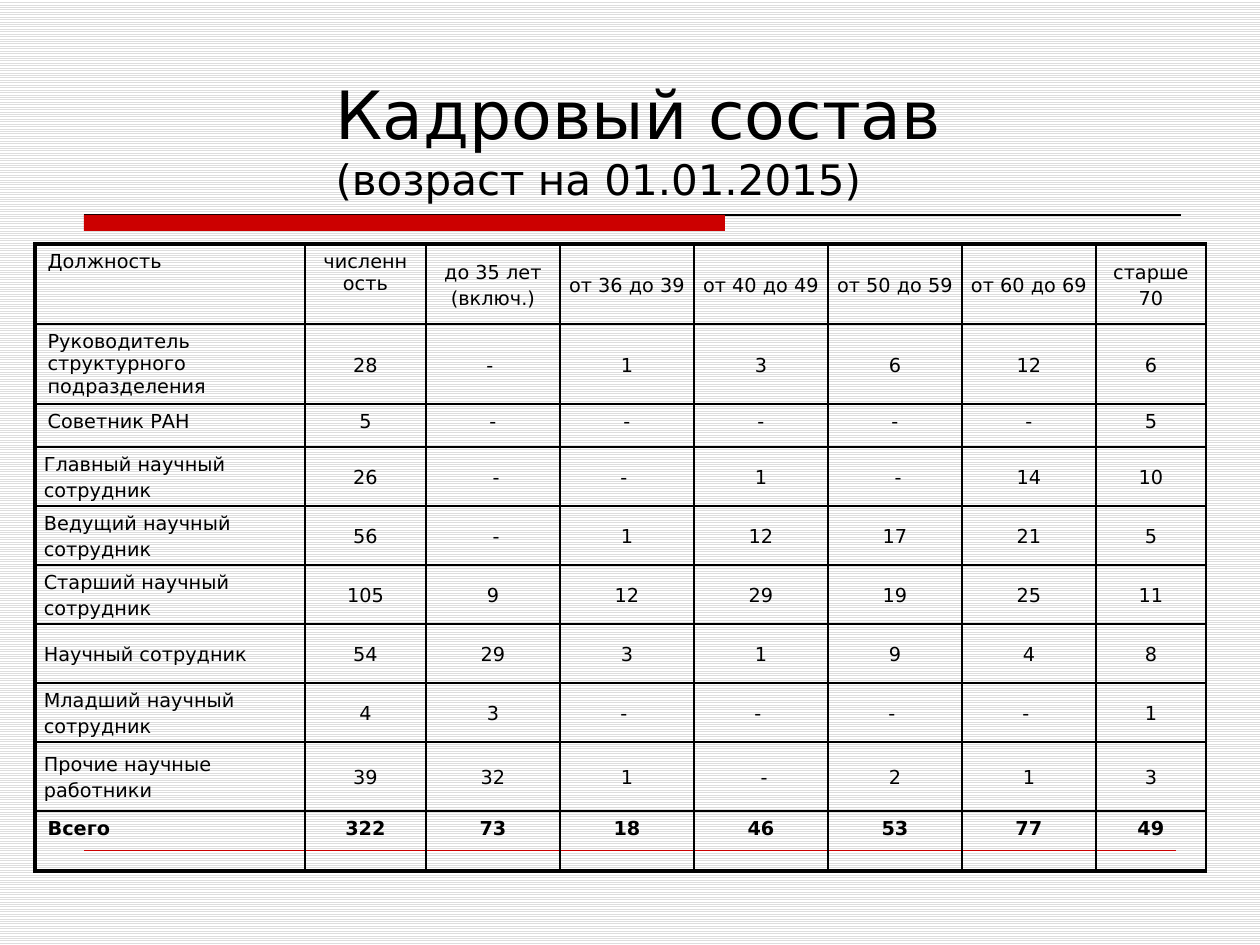
from lxml import etree
from pptx import Presentation
from pptx import util as u
from pptx.dml.color import RGBColor
from pptx.enum import dml, shapes, text
from pptx.oxml import ns

PX = 914400 // 126
LEFT, CENTER = text.PP_ALIGN.LEFT, text.PP_ALIGN.CENTER
TOP, MIDDLE = text.MSO_ANCHOR.TOP, text.MSO_ANCHOR.MIDDLE
BLACK, RED = "000000", "CC0000"

COLS = [270, 121] + [134] * 5 + [110]
ROWS = [80, 57, 43] + [59] * 5 + [69, 60]
DATA = [line.split("|") for line in (
    "Должность|численность|до 35 лет (включ.)|от 36 до 39|от 40 до 49|от 50 до 59|от 60 до 69|старше 70",
    "Руководитель структурного подразделения|28|- |1|3|6|12|6",
    "Советник РАН|5|-|-|-|-|-|5",
    "Главный научный сотрудник|26| -|- |1| -|14|10",
    "Ведущий научный сотрудник|56| -|1|12|17|21|5",
    "Старший научный сотрудник|105|9|12|29|19|25|11",
    "Научный сотрудник|54|29|3|1|9|4|8",
    "Младший научный сотрудник|4|3|- |- |- |- |1",
    "Прочие научные работники|39|32|1| -|2|1|3",
    "Всего|322|73|18|46|53|77|49",
)]
LAST = len(DATA) - 1
TOP_CELLS = {(0, 0), (0, 1), (1, 0)}
TOP_ROWS = {2, LAST}


def px(n):
    return u.Emu(n * PX)


def color(value):
    return RGBColor.from_string(value)


def write(p, content, size=11, bold=False, font="DejaVu Sans", fill=BLACK,
          align=LEFT, spacing=1.0, before=0, after=0):
    p.alignment, p.line_spacing = align, spacing
    p.space_before, p.space_after = u.Pt(before), u.Pt(after)
    r = p.add_run()
    r.text = content
    r.font.size, r.font.bold, r.font.name = u.Pt(size), bold, font
    r.font.color.rgb = color(fill)


def border(cell, side, width):
    ln = etree.SubElement(cell._tc.get_or_add_tcPr(), ns.qn("a:ln" + side),
                          w=str(u.Pt(width)))
    fill = etree.SubElement(ln, ns.qn("a:solidFill"))
    etree.SubElement(fill, ns.qn("a:srgbClr"), val=BLACK)


class Deck:
    def __init__(self, width, height):
        self.prs = Presentation()
        self.prs.slide_width, self.prs.slide_height = px(width), px(height)
        self.s = self.prs.slides.add_slide(self.prs.slide_layouts[5])

    def background(self, fore, back):
        fill = self.s.background.fill
        fill.patterned()
        fill.pattern = dml.MSO_PATTERN.LIGHT_HORIZONTAL
        fill.fore_color.rgb, fill.back_color.rgb = color(fore), color(back)

    def title(self, x, y, w, h, main, sub):
        sp = self.s.shapes.title
        sp.left, sp.top, sp.width, sp.height = map(px, (x, y, w, h))
        tf = sp.text_frame
        tf.word_wrap, tf.auto_size = True, text.MSO_AUTO_SIZE.NONE
        tf.vertical_anchor = text.MSO_ANCHOR.BOTTOM
        p = tf.paragraphs[0]
        write(p, main, size=38)
        p.add_line_break()
        write(p, sub, size=24)

    def bar(self, x, y, w, h, fill):
        sp = self.s.shapes.add_shape(shapes.MSO_SHAPE.RECTANGLE,
                                     px(x), px(y), px(w), px(h))
        sp.shadow.inherit = False
        sp.fill.solid()
        sp.fill.fore_color.rgb = color(fill)
        sp.line.fill.background()

    def rule(self, x1, x2, y, stroke, width):
        cn = self.s.shapes.add_connector(shapes.MSO_CONNECTOR.STRAIGHT,
                                         px(x1), px(y), px(x2), px(y))
        cn.line.color.rgb, cn.line.width = color(stroke), u.Pt(width)
        etree.SubElement(cn._element.spPr, ns.qn("a:effectLst"))

    def table(self, x, y):
        frame = self.s.shapes.add_table(len(ROWS), len(COLS), px(x), px(y),
                                        px(sum(COLS)), px(sum(ROWS)))
        tbl = frame.table
        tbl.first_row = tbl.horz_banding = False
        for col, w in zip(tbl.columns, COLS):
            col.width = px(w)
        for row, h in zip(tbl.rows, ROWS):
            row.height = px(h)
        for i, values in enumerate(DATA):
            for j, value in enumerate(values):
                self.cell(tbl.cell(i, j), i, j, value)

    def cell(self, cell, i, j, value):
        align = CENTER if j else LEFT
        p = cell.text_frame.paragraphs[0]
        if i in TOP_ROWS or (i, j) in TOP_CELLS:
            cell.vertical_anchor, side, edge = TOP, 0.1, 0.05
            write(p, value, align=align, bold=i == LAST, before=2.2)
        else:
            cell.vertical_anchor, side, edge = MIDDLE, 0.07, 0
            write(p, value, align=align, spacing=1.15,
                  after=10 if i and j else 0)
        cell.margin_left = cell.margin_right = u.Inches(side)
        cell.margin_top = cell.margin_bottom = u.Inches(edge)
        # Thick outer edges on the left, top and bottom
        border(cell, "L", 1 if j else 2.25)
        border(cell, "R", 1)
        border(cell, "T", 1 if i else 2.25)
        border(cell, "B", 2.25 if i == LAST else 1)
        cell.fill.background()


def main():
    d = Deck(1260, 945)
    d.background("DDDDDD", "FFFFFF")
    # Decorative bar and rules
    d.rule(84, 1181, 215, BLACK, 0.75)
    d.bar(84, 215, 641, 16, RED)
    d.rule(84, 1176, 850, RED, 0.25)
    # Heading and staff table
    d.title(323, 42, 859, 168, "Кадровый состав", "(возраст на 01.01.2015)")
    d.table(35, 244)
    d.prs.save("out.pptx")


if __name__ == "__main__":
    main()
